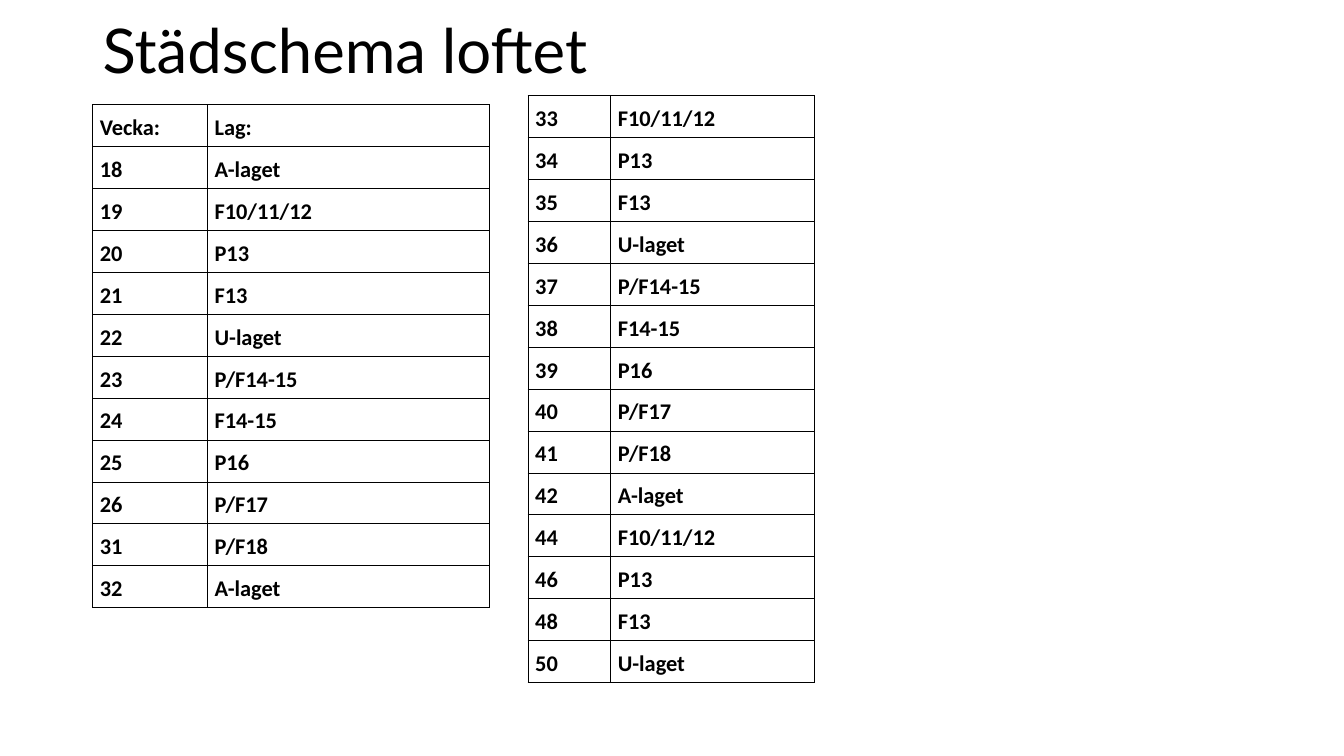
from itertools import chain, cycle

from lxml.etree import SubElement
from pptx import Presentation
from pptx.dml.color import RGBColor
from pptx.enum.text import MSO_ANCHOR as Anchor
from pptx.oxml.ns import qn
from pptx.util import Inches, Pt

BLACK = "000000"
TEAMS = ["A-laget", "F10/11/12", "P13", "F13", "U-laget",
         "P/F14-15", "F14-15", "P16", "P/F17", "P/F18"]
WEEKS = list(chain(range(18, 27), range(31, 43), range(44, 51, 2)))
LEFT_WEEKS = 11


def colour(code):
    return RGBColor.from_string(code)


def assign(target, values):
    for name, value in values.items():
        setattr(target, name, value)


class ScheduleSlide:
    """Draws schedule parts on one slide, with lengths in percent of its size."""

    title_font = {"name": "Lato", "size": Pt(44)}
    cell_font = {"name": "Calibri", "size": Pt(16), "bold": True}
    cell_margins = {"margin_left": Inches(0.07), "margin_right": Inches(0.07),
                    "margin_top": Inches(0.05), "margin_bottom": Inches(0.05)}
    plain_table = {"first_row": False, "horz_banding": False}
    row_share = 5.33

    def __init__(self, deck):
        self.deck = deck
        self.slide = deck.slides.add_slide(deck.slide_layouts[6])

    def across(self, share):
        return round(self.deck.slide_width * share / 100)

    def down(self, share):
        return round(self.deck.slide_height * share / 100)

    def wording(self, paragraph, words, font, spacing):
        run = paragraph.add_run()
        run.text = words
        assign(run.font, font)
        run.font.color.rgb = colour(BLACK)
        paragraph.line_spacing = spacing

    def title(self, words, left, top, width, height):
        heading = self.slide.shapes.add_textbox(
            self.across(left), self.down(top),
            self.across(width), self.down(height)).text_frame
        assign(heading, {"word_wrap": True, "vertical_anchor": Anchor.MIDDLE})
        self.wording(heading.paragraphs[0], words, self.title_font, 0.9)

    def border(self, cell):
        properties = cell._tc.get_or_add_tcPr()
        for side in ("lnL", "lnR", "lnT", "lnB"):
            line = SubElement(properties, qn(f"a:{side}"), w=str(Pt(0.75)))
            fill = SubElement(line, qn("a:solidFill"))
            SubElement(fill, qn("a:srgbClr"), val=BLACK)

    def table(self, rows, left, top, widths):
        schedule = self.slide.shapes.add_table(
            len(rows), len(widths), self.across(left), self.down(top),
            self.across(sum(widths)), self.down(self.row_share * len(rows))).table
        assign(schedule, self.plain_table)
        for column, width in zip(schedule.columns, widths):
            column.width = self.across(width)
        for row, entries in zip(schedule.rows, rows):
            row.height = self.down(self.row_share)
            for cell, entry in zip(row.cells, entries):
                assign(cell, self.cell_margins)
                self.border(cell)
                cell.fill.background()
                self.wording(cell.text_frame.paragraphs[0], str(entry),
                             self.cell_font, Pt(22.7))


def main():
    deck = Presentation()
    assign(deck, {"slide_width": Inches(13.33), "slide_height": Inches(7.5)})
    duties = list(zip(WEEKS, cycle(TEAMS)))
    page = ScheduleSlide(deck)
    page.title("Städschema loftet", 6.9, 1.73, 86.25, 10.8)
    page.table([("Vecka:", "Lag:")] + duties[:LEFT_WEEKS], 6.9, 13.87, (8.55, 21))
    page.table(duties[LEFT_WEEKS:], 39.3, 12.67, (6.15, 15.15))
    deck.save("out.pptx")


if __name__ == "__main__":
    main()
